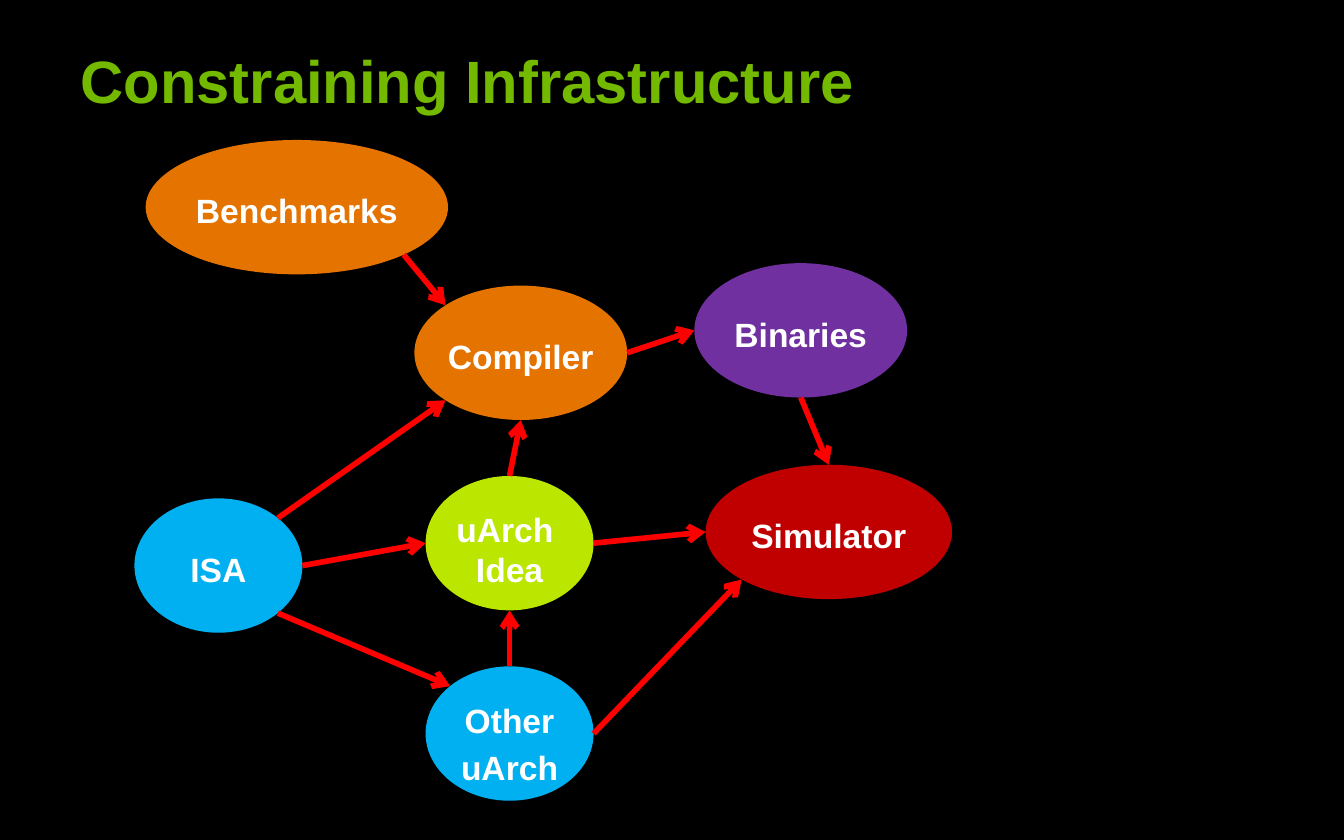
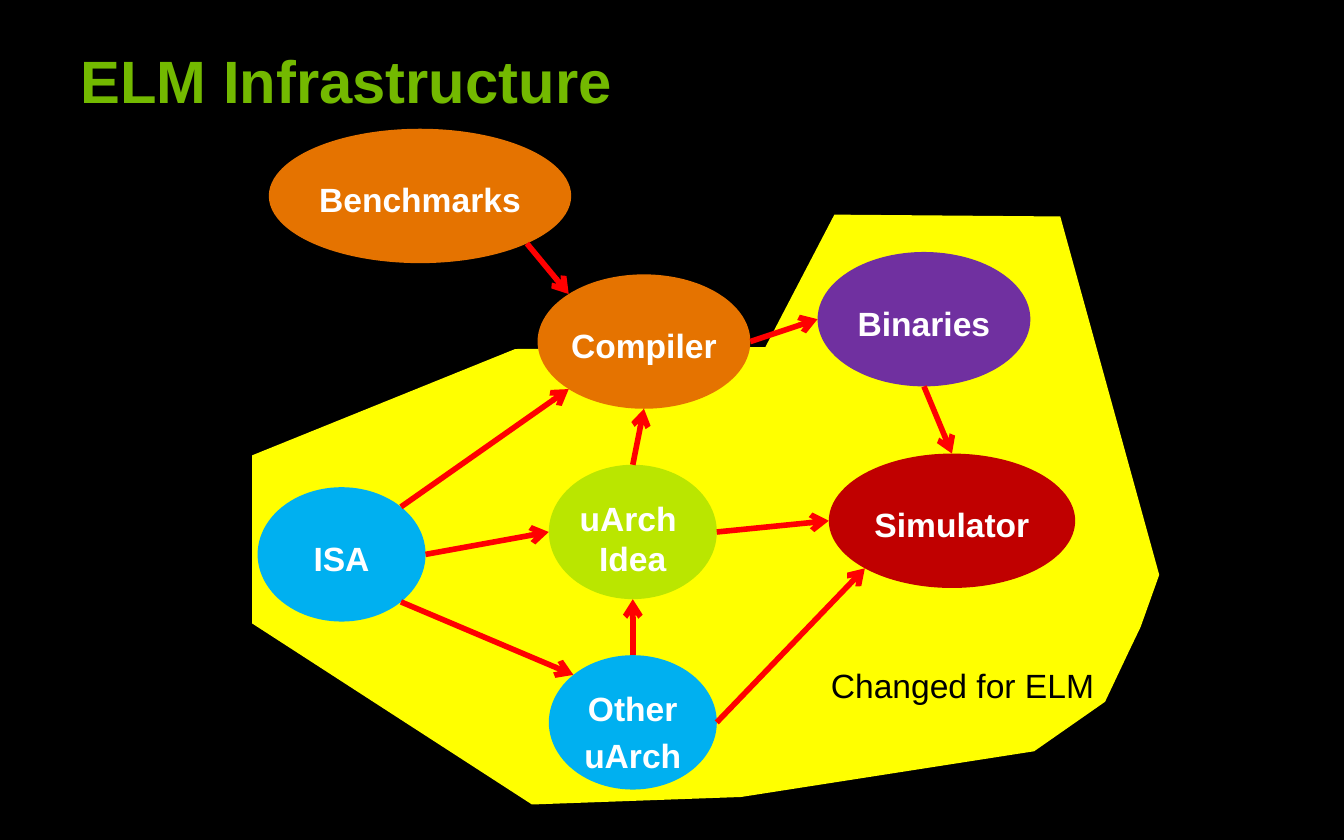
from math import sqrt
from typing import NamedTuple

from lxml.etree import SubElement
from pptx import Presentation
from pptx.dml.color import RGBColor
from pptx.enum.shapes import MSO_CONNECTOR as Connector, MSO_SHAPE as Shape
from pptx.enum.text import MSO_ANCHOR as Anchor, MSO_AUTO_SIZE as AutoSize, PP_ALIGN as Align
from pptx.oxml.ns import qn
from pptx.util import Pt

# Shared look
COLORS = {
    "background": "000000", "title": "73B900", "node text": "FFFFFF", "note": "000000",
    "idea": "BAE600", "architecture": "00B0F0", "software": "E57300",
    "binaries": "7030A0", "simulator": "C00000", "arrow": "FF0000", "changed": "FFFF00",
}
TITLE_FONT = {"name": "Arial", "size": Pt(32), "bold": True}
NODE_FONT = {"name": "Arial", "size": Pt(18), "bold": True}
NOTE_FONT = {"name": "Arial", "size": Pt(18), "bold": False}
TITLE_BOX = {"left": Pt(36), "top": Pt(18), "width": Pt(582), "height": Pt(46)}
TITLE_FRAME = {"auto_size": AutoSize.NONE, "vertical_anchor": Anchor.BOTTOM,
               "word_wrap": True, "margin_bottom": Pt(2)}
NODE_FRAME = {"word_wrap": False, "margin_left": 0, "margin_right": 0,
              "margin_top": Pt(7.2), "margin_bottom": Pt(3.6)}
NODE_HEIGHT = 72
TITLE_ONLY = 5

# Points on an ellipse, as fractions of its half width and half height
DIAGONAL = sqrt(0.5)
SITES = {
    "top": (0, -1), "bottom": (0, 1), "left": (-1, 0), "right": (1, 0),
    "top left": (-DIAGONAL, -DIAGONAL), "top right": (DIAGONAL, -DIAGONAL),
    "bottom left": (-DIAGONAL, DIAGONAL), "bottom right": (DIAGONAL, DIAGONAL),
}


class Node(NamedTuple):
    text: str
    color: str
    left: float
    top: float
    width: float
    anchor: Anchor = Anchor.MIDDLE

    def site(self, name: str, shift: tuple) -> tuple:
        across, down = SITES[name]
        x = self.left + shift[0] + self.width / 2 * (1 + across)
        y = self.top + shift[1] + NODE_HEIGHT / 2 * (1 + down)
        return Pt(x), Pt(y)


class Link(NamedTuple):
    source: str
    source_site: str
    target: str
    target_site: str


# Tool flow shown on both slides
NODES = {
    "idea": Node("uArch \vIdea", "idea", 228, 255, 90, Anchor.TOP),
    "other": Node("Other\nuArch", "architecture", 228, 357, 90, Anchor.TOP),
    "isa": Node("ISA", "architecture", 72, 267, 90),
    "compiler": Node("Compiler", "software", 222, 153, 114),
    "benchmarks": Node("Benchmarks", "software", 78, 75, 162),
    "binaries": Node("Binaries", "binaries", 372, 141, 114),
    "simulator": Node("Simulator", "simulator", 378, 249, 132),
}
LINKS = [
    Link("other", "top", "idea", "bottom"),
    Link("isa", "right", "idea", "left"),
    Link("isa", "top right", "compiler", "bottom left"),
    Link("isa", "bottom right", "other", "top left"),
    Link("idea", "top", "compiler", "bottom"),
    Link("benchmarks", "bottom right", "compiler", "top left"),
    Link("compiler", "right", "binaries", "left"),
    Link("binaries", "bottom", "simulator", "top"),
    Link("idea", "right", "simulator", "left"),
    Link("other", "right", "simulator", "bottom left"),
]
ELM_SHIFT = (66, -6)
CHANGED_OUTLINE = [
    (135, 334), (135, 244), (276, 187), (410, 186), (447, 115), (568, 116), (621, 308),
    (611, 336), (605, 348.5), (592, 376), (554, 402.5), (397, 427), (285, 431),
]


def rgb(name: str) -> RGBColor:
    return RGBColor.from_string(COLORS[name])


def apply(target, values: dict) -> None:
    for name, value in values.items():
        setattr(target, name, value)


def write(frame, text: str, font: dict, color: str, align: Align) -> None:
    frame.text = text
    for paragraph in frame.paragraphs:
        paragraph.alignment = align
        apply(paragraph.font, font)
        paragraph.font.color.rgb = rgb(color)
    for paragraph in frame.paragraphs[1:]:
        paragraph.space_before = Pt(3.6)


def paint(shape, color: str) -> None:
    shape.shadow.inherit = False
    shape.fill.solid()
    shape.fill.fore_color.rgb = rgb(color)
    shape.line.fill.background()


def add_titled_slide(deck, title: str):
    slide = deck.slides.add_slide(deck.slide_layouts[TITLE_ONLY])
    heading = slide.shapes.title
    apply(heading, TITLE_BOX)
    apply(heading.text_frame, TITLE_FRAME)
    write(heading.text_frame, title, TITLE_FONT, "title", Align.LEFT)
    return slide


def draw_node(shapes, node: Node, shift: tuple) -> None:
    ellipse = shapes.add_shape(Shape.OVAL, Pt(node.left + shift[0]), Pt(node.top + shift[1]),
                               Pt(node.width), Pt(NODE_HEIGHT))
    paint(ellipse, node.color)
    apply(ellipse.text_frame, NODE_FRAME | {"vertical_anchor": node.anchor})
    write(ellipse.text_frame, node.text, NODE_FONT, "node text", Align.CENTER)


def draw_link(shapes, link: Link, shift: tuple) -> None:
    start = NODES[link.source].site(link.source_site, shift)
    end = NODES[link.target].site(link.target_site, shift)
    arrow = shapes.add_connector(Connector.STRAIGHT, *start, *end)
    arrow.line.color.rgb = rgb("arrow")
    arrow.line.width = Pt(3)
    properties = arrow._element.spPr
    SubElement(properties.find(qn("a:ln")), qn("a:tailEnd"), type="arrow")
    SubElement(properties, qn("a:effectLst"))


def draw_flow(shapes, shift: tuple = (0, 0)) -> None:
    for node in NODES.values():
        draw_node(shapes, node, shift)
    for link in LINKS:
        draw_link(shapes, link, shift)


def draw_changed_area(shapes) -> None:
    first, *rest = [(Pt(x), Pt(y)) for x, y in CHANGED_OUTLINE]
    builder = shapes.build_freeform(*first)
    builder.add_line_segments(rest, close=True)
    paint(builder.convert_to_shape(), "changed")


def draw_changed_note(shapes) -> None:
    note = shapes.add_textbox(Pt(438), Pt(351), Pt(156), Pt(29)).text_frame
    apply(note, {"word_wrap": True, "margin_top": Pt(5)})
    write(note, "Changed for ELM", NOTE_FONT, "note", Align.LEFT)


def main() -> None:
    deck = Presentation()
    apply(deck, {"slide_width": Pt(720), "slide_height": Pt(450)})
    backdrop = deck.slide_master.background.fill
    backdrop.solid()
    backdrop.fore_color.rgb = rgb("background")

    # Slide 1: the whole flow as one group
    constraining = add_titled_slide(deck, "Constraining Infrastructure")
    draw_flow(constraining.shapes.add_group_shape().shapes)

    # Slide 2: the flow over the area changed for ELM
    elm = add_titled_slide(deck, "ELM Infrastructure")
    draw_changed_area(elm.shapes)
    draw_flow(elm.shapes, ELM_SHIFT)
    draw_changed_note(elm.shapes)

    deck.save("out.pptx")


if __name__ == "__main__":
    main()
